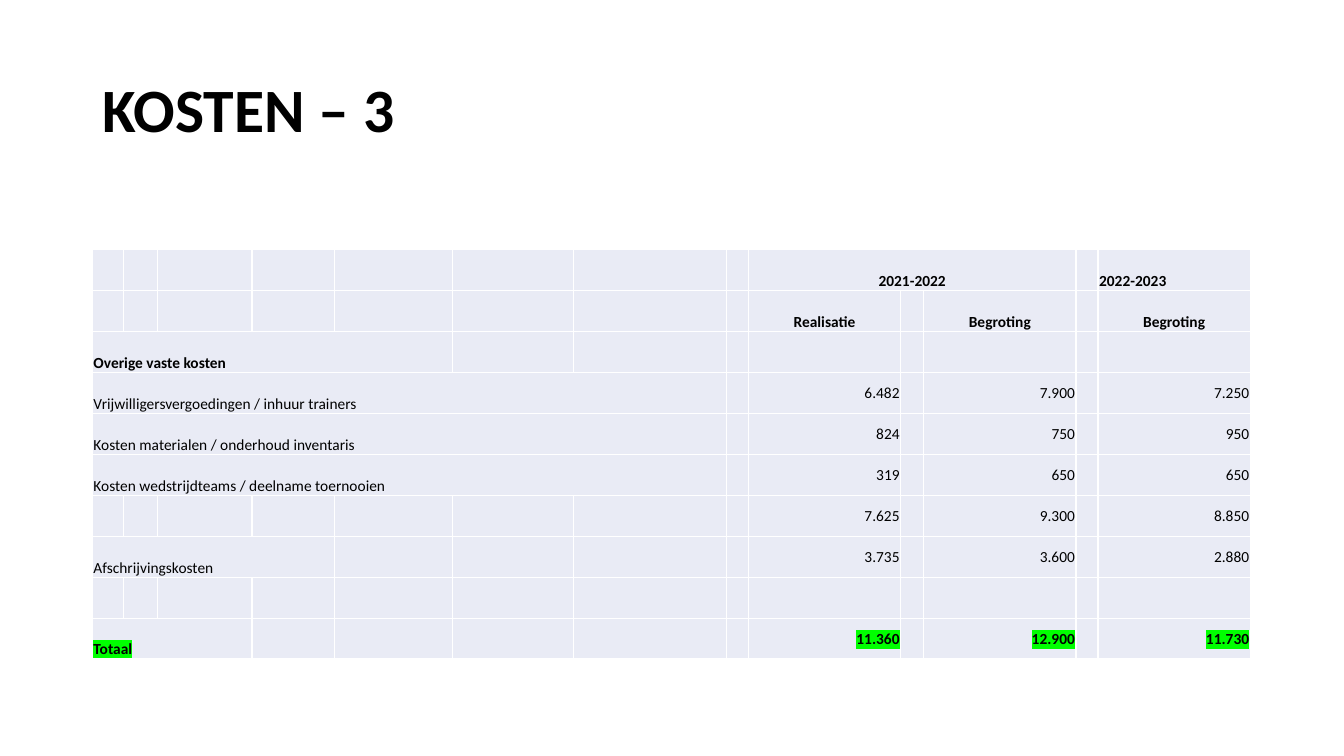
from dataclasses import dataclass

from lxml import etree
from pptx import Presentation
from pptx import util as u
from pptx.dml.color import RGBColor
from pptx.enum import text
from pptx.oxml.ns import qn

PX = u.Inches(1) // 96
LEFT, CENTER, RIGHT = text.PP_ALIGN.LEFT, text.PP_ALIGN.CENTER, text.PP_ALIGN.RIGHT
MIDDLE, BOTTOM = text.MSO_ANCHOR.MIDDLE, text.MSO_ANCHOR.BOTTOM


@dataclass(frozen=True)
class Theme:
    font: str = "Calibri"
    ink: str = "000000"
    cell: str = "E9EBF5"
    border: str = "FFFFFF"
    highlight: str = "00FF00"
    title_pt: int = 44
    table_pt: int = 11
    border_pt: int = 1


THEME = Theme()
COLUMNS = [30, 32, 90, 79, 112, 115, 146, 21, 145, 22, 145, 21, 145]
ROW_HEIGHT = 39
AMOUNT_COLUMNS = [8, 10, 12]

# Column headings: row, column, columns spanned, wording, alignment
HEADINGS = [
    (0, 8, 3, "2021-2022", CENTER),
    (0, 12, 1, "2022-2023", LEFT),
    (1, 8, 1, "Realisatie", CENTER),
    (1, 10, 1, "Begroting", CENTER),
    (1, 12, 1, "Begroting", CENTER),
]

# Cost lines: label, columns spanned, amounts
COSTS = [
    ("Overige vaste kosten", 5, []),
    ("Vrijwilligersvergoedingen / inhuur trainers", 7, ["6.482", "7.900", "7.250"]),
    ("Kosten materialen / onderhoud inventaris", 7, ["824", "750", "950"]),
    ("Kosten wedstrijdteams / deelname toernooien", 7, ["319", "650", "650"]),
    ("", 1, ["7.625", "9.300", "8.850"]),
    ("Afschrijvingskosten", 4, ["3.735", "3.600", "2.880"]),
    ("", 1, []),
    ("Totaal", 3, ["11.360", "12.900", "11.730"]),
]
BOLD_LABELS = {"Overige vaste kosten", "Totaal"}


def set_all(target, values):
    for name, value in values.items():
        setattr(target, name, value)


def write(paragraph, wording, size, bold, align):
    paragraph.alignment = align
    run = paragraph.add_run()
    run.text = wording
    set_all(run.font, {"name": THEME.font, "size": u.Pt(size), "bold": bold})
    run.font.color.rgb = RGBColor.from_string(THEME.ink)
    return run


def highlight(run):
    mark = etree.Element(qn("a:highlight"))
    etree.SubElement(mark, qn("a:srgbClr"), val=THEME.highlight)
    run.font._element.find(qn("a:solidFill")).addnext(mark)


def style_cell(cell):
    set_all(cell, {"margin_left": PX, "margin_right": PX, "margin_top": PX, "margin_bottom": 0})
    properties = cell._tc.get_or_add_tcPr()
    for side in ("lnL", "lnR", "lnT", "lnB"):
        line = etree.SubElement(properties, qn(f"a:{side}"), w=str(u.Pt(THEME.border_pt)))
        fill = etree.SubElement(line, qn("a:solidFill"))
        etree.SubElement(fill, qn("a:srgbClr"), val=THEME.border)
    cell.fill.solid()
    cell.fill.fore_color.rgb = RGBColor.from_string(THEME.cell)


def add_title(slide, wording, left, top, width, height):
    title = slide.shapes.title
    set_all(title, {"left": left * PX, "top": top * PX, "width": width * PX, "height": height * PX})
    set_all(title.text_frame, {"vertical_anchor": MIDDLE, "word_wrap": True,
                               "auto_size": text.MSO_AUTO_SIZE.NONE})
    heading = title.text_frame.paragraphs[0]
    heading.line_spacing = 0.9
    write(heading, wording, THEME.title_pt, True, LEFT)


def add_cost_table(slide, left, top):
    row_count = 2 + len(COSTS)
    costs = slide.shapes.add_table(row_count, len(COLUMNS), left * PX, top * PX,
                                   sum(COLUMNS) * PX, row_count * ROW_HEIGHT * PX).table
    set_all(costs, {"first_row": False, "horz_banding": False})
    for column, width in zip(costs.columns, COLUMNS):
        column.width = width * PX
    for row in costs.rows:
        row.height = ROW_HEIGHT * PX
    for cell in costs.iter_cells():
        style_cell(cell)

    def put(row, column, span, wording, align, anchor, bold):
        cell = costs.cell(row, column)
        if span > 1:
            cell.merge(costs.cell(row, column + span - 1))
        cell.vertical_anchor = anchor
        return write(cell.text_frame.paragraphs[0], wording, THEME.table_pt, bold, align)

    # Years and kinds of amount
    for row, column, span, wording, align in HEADINGS:
        put(row, column, span, wording, align, BOTTOM, True)

    # Cost lines and total
    for row, (label, span, amounts) in enumerate(COSTS, start=2):
        is_total = label == "Totaal"
        entries = []
        if label:
            entries.append(put(row, 0, span, label, LEFT, BOTTOM, label in BOLD_LABELS))
        for column, amount in zip(AMOUNT_COLUMNS, amounts):
            entries.append(put(row, column, 1, amount, RIGHT, MIDDLE, is_total))
        if is_total:
            for entry in entries:
                highlight(entry)


def main():
    deck = Presentation()
    set_all(deck, {"slide_width": 1280 * PX, "slide_height": 720 * PX})
    slide = deck.slides.add_slide(deck.slide_layouts.get_by_name("Title Only"))
    add_title(slide, "KOSTEN – 3", 88, 38, 1104, 139)
    add_cost_table(slide, 88, 238)
    deck.save("out.pptx")


if __name__ == "__main__":
    main()
